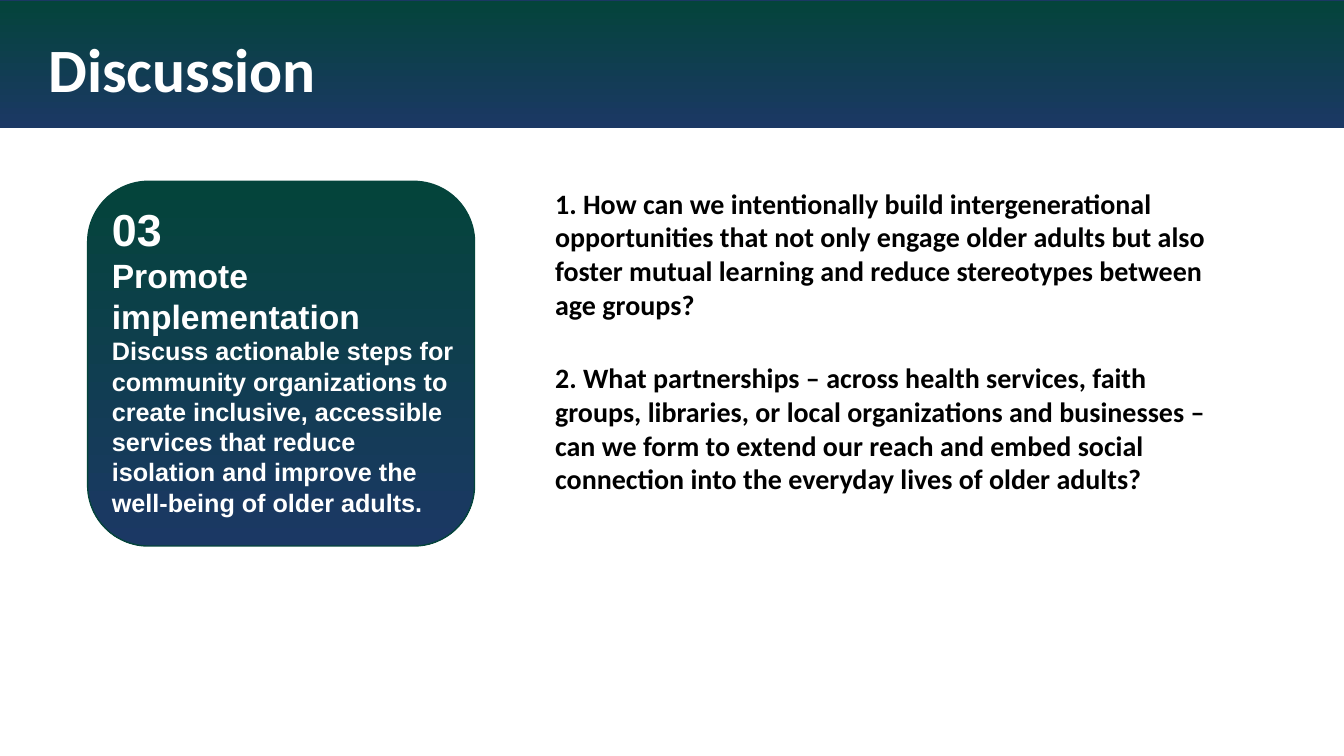
from pptx import Presentation
from pptx.dml.color import RGBColor
from pptx.enum.shapes import MSO_SHAPE
from pptx.enum.text import MSO_AUTO_SIZE
from pptx.util import Cm, Pt

GREEN = RGBColor(0x04, 0x44, 0x3B)
NAVY = RGBColor(0x1B, 0x38, 0x64)
WHITE = RGBColor(0xFF, 0xFF, 0xFF)
BLACK = RGBColor(0x00, 0x00, 0x00)

CARD = [
    ("03", 32),
    ("Promote implementation", 24),
    ("Discuss actionable steps for community organizations to create "
     "inclusive, accessible services that reduce isolation and improve "
     "the well-being of older adults.", 18),
]
ASKS = [
    "1. How can we intentionally build intergenerational opportunities that "
    "not only engage older adults but also foster mutual learning and reduce "
    "stereotypes between age groups?",
    "2. What partnerships – across health services, faith groups, libraries, "
    "or local organizations and businesses – can we form to extend our reach "
    "and embed social connection into the everyday lives of older adults?",
]


def add_panel(shapes, kind, box, edge):
    """Add a shape that fades from green at the top to navy."""
    panel = shapes.add_shape(kind, *map(Cm, box))
    panel.shadow.inherit = False
    panel.fill.gradient()
    panel.fill.gradient_angle = 270
    for stop, color, place in zip(panel.fill.gradient_stops, (GREEN, NAVY), (0, 1)):
        stop.color.rgb = color
        stop.position = place
    panel.line.color.rgb = edge
    panel.line.width = Pt(1)


def add_text(shapes, box, parts, font, color):
    """Add bold text from (words, size) parts, each on a new line."""
    frame = shapes.add_textbox(*map(Cm, box)).text_frame
    frame.word_wrap = True
    frame.auto_size = MSO_AUTO_SIZE.SHAPE_TO_FIT_TEXT
    para = frame.paragraphs[0]
    for index, (words, size) in enumerate(parts):
        if index:
            para.add_line_break()
        run = para.add_run()
        run.text = words
        run.font.name = font
        run.font.size = Pt(size)
        run.font.bold = True
        run.font.color.rgb = color


def add_card(shapes):
    card = shapes.add_group_shape().shapes
    add_panel(card, MSO_SHAPE.ROUNDED_RECTANGLE, (2.21, 4.57, 9.75, 9.19), GREEN)
    add_text(card, (2.57, 4.95, 9.4, 7.26), CARD, "Arial", WHITE)


def main():
    deck = Presentation()
    deck.slide_width, deck.slide_height = Cm(33.87), Cm(19.05)
    shapes = deck.slides.add_slide(deck.slide_layouts[6]).shapes

    add_card(shapes)
    for row, ask in enumerate(ASKS):
        box = (13.74, 4.57 + 4.4 * row, 17.58, 3.68)
        add_text(shapes, box, [(ask, 20)], "Calibri", BLACK)
    add_panel(shapes, MSO_SHAPE.RECTANGLE, (-0.25, 0, 34.77, 3.2), NAVY)
    add_text(shapes, (0.97, 0.66, 21.26, 2.13), [("Discussion", 44)], "Calibri", WHITE)

    deck.save("out.pptx")


if __name__ == "__main__":
    main()
